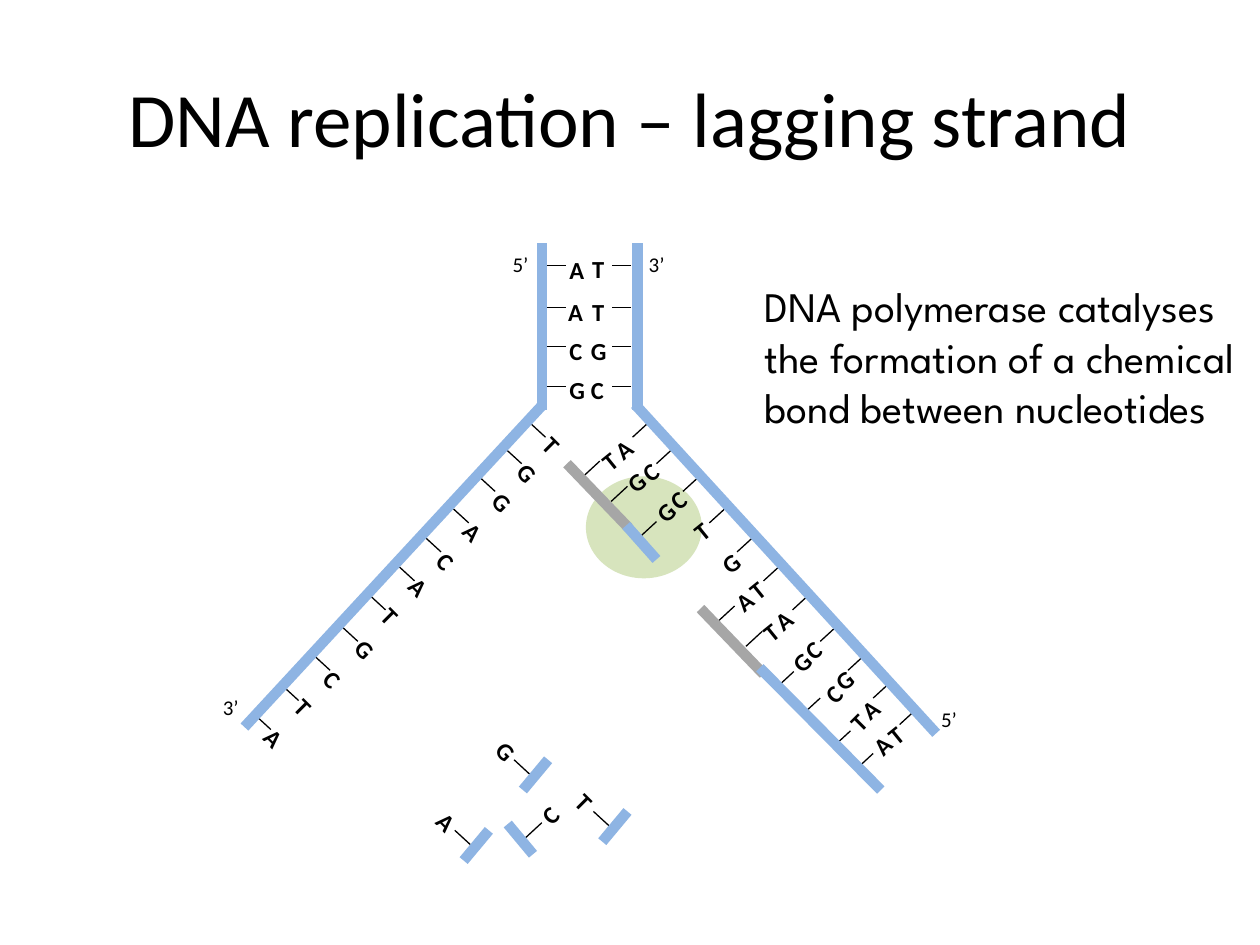
from pptx import Presentation
from pptx.dml.color import RGBColor
from pptx.enum.shapes import MSO_CONNECTOR, MSO_SHAPE
from pptx.enum.text import MSO_ANCHOR, MSO_AUTO_SIZE, PP_ALIGN
from pptx.oxml.ns import qn
from pptx.util import Cm, Pt
from lxml import etree

STRAIGHT = MSO_CONNECTOR.STRAIGHT
OVAL = MSO_SHAPE.OVAL
MIDDLE = MSO_ANCHOR.MIDDLE
CENTER = PP_ALIGN.CENTER
GROW = MSO_AUTO_SIZE.SHAPE_TO_FIT_TEXT

COLORS = {"ink": "000000", "strand": "8EB4E3", "primer": "A6A6A6", "enzyme": "D7E4BD"}
FONT = "Calibri"
NOTE_FONT = "League Spartan"
STRAND_WIDTH, RUNG_WIDTH = 6, 0.75
BASE_SIZE = 0.31
FORK_MIRROR = 9.35  # left x + right x of mirrored fork parts

# Bases as (letter, left, top), grouped by rotation
BASES = {
    0: [("A", 4.42, 1.94), ("T", 4.6, 1.93), ("A", 4.41, 2.27), ("T", 4.6, 2.27),
        ("C", 4.42, 2.58), ("G", 4.59, 2.58), ("G", 4.42, 2.89), ("C", 4.59, 2.89)],
    48.2: [("G", 4.06, 3.56)],
    45: [("T", 4.26, 3.35), ("G", 3.86, 3.79), ("A", 3.63, 4.03), ("C", 3.42, 4.27),
         ("A", 3.2, 4.47), ("T", 2.98, 4.71), ("G", 2.77, 4.96), ("C", 2.52, 5.21),
         ("T", 2.29, 5.43), ("A", 2.05, 5.67)],
    321: [("A", 4.76, 3.38), ("C", 4.98, 3.55), ("C", 5.2, 3.77), ("T", 5.39, 4.02),
          ("G", 5.61, 4.28), ("T", 5.83, 4.49), ("A", 6.03, 4.73), ("C", 6.27, 4.96),
          ("G", 6.51, 5.21), ("A", 6.72, 5.44), ("T", 6.93, 5.64),
          ("T", 4.66, 3.46), ("G", 4.86, 3.64), ("A", 5.72, 4.58), ("T", 5.94, 4.82)],
    315: [("G", 5.09, 3.88), ("G", 6.17, 5.07), ("C", 6.43, 5.32),
          ("T", 6.63, 5.54), ("A", 6.81, 5.73)],
}
STEM_RUNGS = [2.11, 2.44, 2.75, 3.07]
FORK_RUNGS = [(4.21, 3.36), (4.02, 3.57), (3.81, 3.79), (3.6, 4.04), (3.38, 4.27),
              (3.17, 4.5), (2.94, 4.73), (2.72, 4.98), (2.5, 5.21)]
LEFT_END_RUNGS = [(2.25, 5.45), (2.03, 5.68)]
RIGHT_END_RUNGS = [(7.05, 5.43), (7.26, 5.64)]
NEW_STRAND_RUNGS = [(4.63, 3.78), (4.85, 3.98), (5.08, 4.26), (5.7, 4.93), (5.92, 5.13),
                    (6.17, 5.45), (6.38, 5.66), (6.62, 5.92), (6.8, 6.1)]
END_LABELS = [("5’", 3.97, 1.92), ("3’", 5.05, 1.92), ("3’", 1.67, 5.43), ("5’", 7.37, 5.53)]
FREE_NUCLEOTIDES = [("G", 3.89, 5.77), ("A", 3.42, 6.33), ("T", 4.52, 6.18)]


def length(inches):
    return Cm(round(inches * 2.54, 3))


def color(name):
    return RGBColor.from_string(COLORS[name])


def add_span(para, text, size, font=FONT, bold=False):
    span = para.add_run()
    span.text = text
    span.font.size = Pt(size)
    span.font.name = font
    span.font.bold = bold
    span.font.color.rgb = color("ink")


def add_box(page, left, top, width, height):
    box = page.shapes.add_textbox(*map(length, (left, top, width, height)))
    box.text_frame.word_wrap = True
    return box


def add_label(page, text, left, top, width, size, rotation=0, bold=False):
    box = add_box(page, left, top, width, BASE_SIZE)
    box.rotation = rotation
    para = box.text_frame.paragraphs[0]
    para.line_spacing = 1.15
    para.space_after = Pt(10)
    add_span(para, text, size, bold=bold)


def add_base(page, letter, left, top, rotation):
    add_label(page, letter, left, top, BASE_SIZE, 14, rotation, bold=True)


def add_line(page, start, end, name="ink", width=RUNG_WIDTH):
    line = page.shapes.add_connector(STRAIGHT, *map(length, (*start, *end)))
    line.line.color.rgb = color(name)
    line.line.width = Pt(width)
    etree.SubElement(line._element.spPr, qn("a:effectLst"))


def add_strand(page, start, end, name="strand"):
    add_line(page, start, end, name, STRAND_WIDTH)


def add_rung(page, start, run, rise):
    add_line(page, start, (start[0] + run, start[1] + rise))


def mirror(point):
    return FORK_MIRROR - point[0], point[1]


def add_fork(page):
    # Rungs of both template strands
    for y in STEM_RUNGS:
        add_line(page, (4.34, y), (4.49, y))
        add_line(page, mirror((4.34, y)), mirror((4.49, y)))
    for point in FORK_RUNGS + LEFT_END_RUNGS:
        add_rung(page, point, 0.12, 0.11)
    for point in [mirror(rung) for rung in FORK_RUNGS] + RIGHT_END_RUNGS:
        add_rung(page, point, -0.12, 0.11)
    # Backbones
    add_strand(page, (4.3, 1.93), (4.3, 3.25))
    add_strand(page, (4.31, 3.21), (1.94, 5.77))
    add_strand(page, (5.06, 1.93), (5.06, 3.25))
    add_strand(page, (5.04, 3.21), (7.43, 5.82))


def add_new_fragments(page):
    for point in NEW_STRAND_RUNGS:
        add_rung(page, point, 0.13, -0.12)
    add_strand(page, (4.99, 4.19), (4.5, 3.68), "primer")
    add_strand(page, (4.97, 4.17), (5.21, 4.44))
    add_strand(page, (6.06, 5.35), (5.56, 4.83), "primer")
    add_strand(page, (6.03, 5.3), (6.99, 6.27))


def add_free_nucleotides(page):
    for letter, left, top in FREE_NUCLEOTIDES:
        add_base(page, letter, left, top, 45)
        add_rung(page, (left + 0.32, top + 0.38), -0.13, -0.12)
        add_strand(page, (left + 0.46, top + 0.26), (left + 0.26, top + 0.5))
    # The one that faces the other way
    add_base(page, "C", 4.18, 6.28, 315)
    add_rung(page, (4.17, 6.65), 0.13, -0.12)
    add_strand(page, (4.03, 6.54), (4.23, 6.78))


def add_title(page, text):
    title = page.shapes.title
    title.left, title.top, title.width, title.height = map(length, (0.5, 0.3, 9, 1.25))
    title.text_frame.vertical_anchor = MIDDLE
    para = title.text_frame.paragraphs[0]
    para.alignment = CENTER
    add_span(para, text, 44)


def add_enzyme(page):
    enzyme = page.shapes.add_shape(OVAL, *map(length, (4.65, 3.78, 0.92, 0.81)))
    enzyme.shadow.inherit = False
    enzyme.fill.solid()
    enzyme.fill.fore_color.rgb = color("enzyme")
    enzyme.line.fill.background()


def add_note(page, text):
    box = add_box(page, 5.97, 2.18, 4.03, 1.72)
    box.text_frame.auto_size = GROW
    add_span(box.text_frame.paragraphs[0], text, 24, NOTE_FONT)


def main():
    deck = Presentation()
    deck.slide_width, deck.slide_height = length(10), length(7.5)
    page = deck.slides.add_slide(deck.slide_layouts[5])

    add_title(page, "DNA replication – lagging strand")
    add_enzyme(page)
    for rotation, bases in BASES.items():
        for letter, left, top in bases:
            add_base(page, letter, left, top, rotation)
    for text, left, top in END_LABELS:
        add_label(page, text, left, top, 0.38, 12)
    add_new_fragments(page)
    add_free_nucleotides(page)
    add_fork(page)
    add_note(page, "DNA polymerase catalyses the formation of a chemical bond between nucleotides")

    deck.save("out.pptx")


if __name__ == "__main__":
    main()
